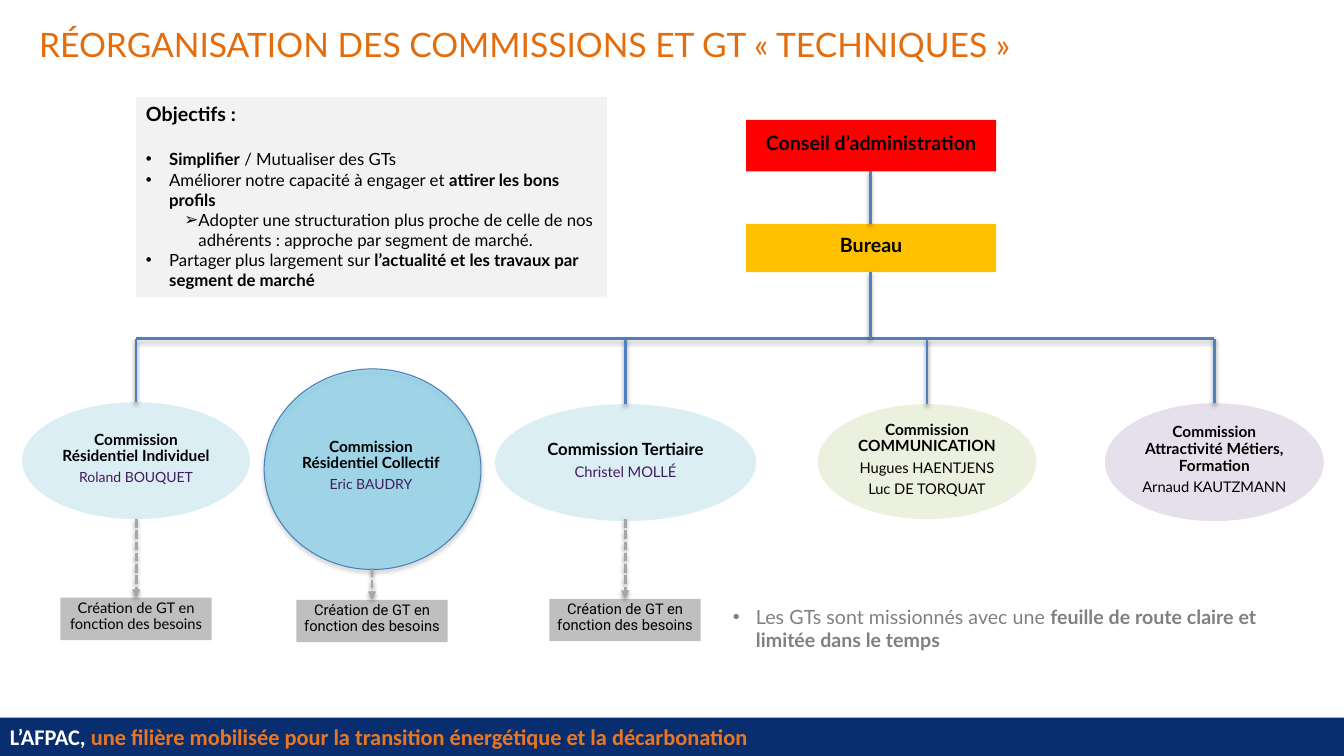
import pptx
import pptx.util
import pptx.dml.color
import pptx.enum.dml
import pptx.enum.shapes
import pptx.enum.text
import pptx.oxml
import pptx.oxml.ns

Inches, Pt = pptx.util.Inches, pptx.util.Pt
SHAPE = pptx.enum.shapes.MSO_SHAPE
ALIGN = pptx.enum.text.PP_ALIGN
ANCHOR = pptx.enum.text.MSO_ANCHOR
NS = pptx.oxml.ns.nsdecls("a")

COLORS = {
    "title": "E46C0A", "navy": "092E6F", "orange": "EA7621", "white": "FFFFFF",
    "black": "000000", "red": "FF0000", "amber": "FFC000", "ice": "DBEEF4",
    "cyan": "00B0F0", "sky": "9FD4E7", "green": "EBF1DE", "lilac": "E6E0EC",
    "purple": "421C5E", "panel": "F2F2F2", "box": "BFBFBF", "note": "808080",
    "link": "4F81BD", "outline": "4B7EBC", "dash": "A6A6A6",
}


def rgb(name):
    return pptx.dml.color.RGBColor.from_string(COLORS[name])


def add_shadow(sp, blur, dist, alpha):
    for old in sp._element.spPr.findall(pptx.oxml.ns.qn("a:effectLst")):
        sp._element.spPr.remove(old)
    sp._element.spPr.append(pptx.oxml.parse_xml(
        f'<a:effectLst {NS}><a:outerShdw blurRad="{Pt(blur)}" dist="{Pt(dist)}" dir="5400000" '
        f'rotWithShape="0"><a:srgbClr val="000000"><a:alpha val="{alpha * 1000}"/></a:srgbClr>'
        '</a:outerShdw></a:effectLst>'))


def add_block(s, kind, box, fill):
    sp = s.shapes.add_shape(kind, *map(Inches, box))
    sp.shadow.inherit = False
    sp.fill.solid()
    sp.fill.fore_color.rgb = rgb(fill)
    sp.line.fill.background()
    sp.text_frame.word_wrap = True
    return sp


def add_text(s, box, anchor=ANCHOR.TOP):
    tf = s.shapes.add_textbox(*map(Inches, box)).text_frame
    tf.word_wrap = True
    tf.vertical_anchor = anchor
    return tf


def add_runs(p, runs, size, color, font="Lato"):
    """Each run is (text, bold)."""
    for text, bold in runs:
        r = p.add_run()
        r.text = text
        r.font.name, r.font.size, r.font.bold = font, Pt(size), bold
        r.font.color.rgb = rgb(color)


def add_bullet(p, char, left, hang):
    pPr = p._p.get_or_add_pPr()
    pPr.set("marL", str(Inches(left)))
    pPr.set("indent", str(-Inches(hang)))
    pPr.append(pptx.oxml.parse_xml(f'<a:buFont {NS} typeface="Arial"/>'))
    pPr.append(pptx.oxml.parse_xml(f'<a:buChar {NS} char="{char}"/>'))


def fill_label(sp, lines, font="Lato"):
    """Each line is (text, size, bold, color)."""
    tf = sp.text_frame
    tf.margin_left = tf.margin_right = tf.margin_top = 0
    tf.margin_bottom = Inches(0.04)
    tf.vertical_anchor = ANCHOR.MIDDLE
    for i, (text, size, bold, color) in enumerate(lines):
        p = tf.add_paragraph() if i else tf.paragraphs[0]
        p.alignment = ALIGN.CENTER
        p.line_spacing = 0.9
        p.space_after = Pt(0.35 * size)
        add_runs(p, [(text, bold)], size, color, font)


def add_link(s, x1, y1, x2, y2, arrow=False):
    ln = s.shapes.add_connector(pptx.enum.shapes.MSO_CONNECTOR.STRAIGHT,
                                *map(Inches, (x1, y1, x2, y2)))
    ln.line.width = Pt(2)
    ln.line.color.rgb = rgb("dash" if arrow else "link")
    if arrow:
        ln.line.dash_style = pptx.enum.dml.MSO_LINE.SQUARE_DOT
        ln.line._get_or_add_ln().append(
            pptx.oxml.parse_xml(f'<a:tailEnd {NS} type="triangle"/>'))
    add_shadow(ln, 3.1, 1.6, 38)


def add_footer(s, box):
    bar = add_block(s, SHAPE.RECTANGLE, box, "navy")
    add_shadow(bar, 3.1, 1.8, 35)
    p = add_text(s, box, ANCHOR.MIDDLE).paragraphs[0]
    add_runs(p, [("L’AFPAC, ", True)], 16, "white", "Calibri")
    add_runs(p, [("une filière mobilisée pour la transition énergétique et la décarbonation", True)],
             16, "orange", "Calibri")


def add_title(s, box):
    p = add_text(s, box, ANCHOR.BOTTOM).paragraphs[0]
    p.line_spacing = 0.9
    add_runs(p, [("RÉORGANISATION DES COMMISSIONS ET GT «\u00a0TECHNIQUES\u00a0»", False)], 24, "title")


def add_objectives(s, box):
    tf = add_block(s, SHAPE.RECTANGLE, box, "panel").text_frame
    tf.vertical_anchor = ANCHOR.TOP
    p = tf.paragraphs[0]
    p.alignment = ALIGN.LEFT
    p.space_after = Pt(17)
    add_runs(p, [("Objectifs :", True)], 14, "black")
    goals = [
        (0, [("Simplifier", True), (" / Mutualiser des GTs", False)]),
        (0, [("Améliorer notre capacité à engager et ", False), ("attirer les bons profils", True)]),
        (1, [("Adopter une structuration plus proche de celle de nos adhérents : "
              "approche par segment de marché.", False)]),
        (0, [("Partager plus largement sur ", False),
             ("l’actualité et les travaux par segment de marché", True)]),
    ]
    for level, runs in goals:
        p = tf.add_paragraph()
        p.alignment = ALIGN.LEFT
        p.level = level
        add_bullet(p, *(("➢", 0.52, 0.14) if level else ("•", 0.23, 0.23)))
        add_runs(p, runs, 12, "black")


def add_governance(s, box, rail_y):
    """Board above bureau, joined down to the rail."""
    x, y, w, h = box
    mid = x + w / 2 - 0.01
    for top, height, text, fill in ((y, 0.51, "Conseil d’administration", "red"),
                                    (y + h - 0.48, 0.48, "Bureau", "amber")):
        sp = add_block(s, SHAPE.RECTANGLE, (x, top, w, height), fill)
        fill_label(sp, [(text, 14, True, "black")])
    add_link(s, mid, y + 0.51, mid, y + h - 0.48)
    add_link(s, mid, y + h, mid, rail_y)


def add_commission(s, box, fill, name, size, people, person_size, person_color):
    lines = [(name, size, True, "black")]
    lines += [(person, person_size, False, person_color) for person in people]
    fill_label(add_block(s, SHAPE.OVAL, box, fill), lines)


def add_highlight(s, box):
    """Circled commission with its label in the middle."""
    x, y, w, h = box
    sp = add_block(s, SHAPE.OVAL, box, "cyan")
    clr = sp._element.spPr.find(".//" + pptx.oxml.ns.qn("a:srgbClr"))
    clr.append(pptx.oxml.parse_xml(f'<a:alpha {NS} val="30000"/>'))
    sp.line.color.rgb = rgb("outline")
    sp.line.width = Pt(0.75)
    add_shadow(sp, 3.1, 1.8, 35)
    label = add_block(s, SHAPE.RECTANGLE, (x + 0.31, y + 0.68, 1.5, 0.6), "sky")
    fill_label(label, [("Commission Résidentiel Collectif", 11, True, "black"),
                       ("Eric BAUDRY", 10, False, "purple")])


def add_working_group(s, box, start_y, font):
    x, y, w, h = box
    sp = add_block(s, SHAPE.RECTANGLE, box, "box")
    fill_label(sp, [("Création de GT en fonction des besoins", 10.5, False, "black")], font)
    add_link(s, x + w / 2, start_y, x + w / 2, y, arrow=True)


def add_note(s, box):
    p = add_text(s, box).paragraphs[0]
    add_bullet(p, "•", 0.23, 0.23)
    add_runs(p, [("Les GTs sont missionnés avec une ", False),
                 ("feuille de route claire et limitée dans le temps", True)], 14, "note")


def main():
    prs = pptx.Presentation()
    prs.slide_width, prs.slide_height = Inches(13.33), Inches(7.5)
    s = prs.slides.add_slide(prs.slide_layouts[6])
    rail_y = 3.36

    add_footer(s, (0, 7.12, 13.33, 0.38))
    add_title(s, (0.29, 0.23, 12.76, 0.46))
    add_objectives(s, (1.35, 0.96, 4.67, 1.99))
    add_highlight(s, (2.62, 3.66, 2.15, 1.99))

    # Commissions hanging from the rail
    commissions = [
        ((0.22, 3.99, 2.26, 1.16), "ice", "Commission Résidentiel Individuel", 11,
         ["Roland BOUQUET"], 10, "purple"),
        ((4.91, 4.01, 2.59, 1.16), "ice", "Commission Tertiaire", 12,
         ["Christel MOLLÉ"], 10.5, "purple"),
        ((8.11, 4.01, 2.17, 1.14), "green", "Commission COMMUNICATION", 11,
         ["Hugues HAENTJENS", "Luc DE TORQUAT"], 10.5, "black"),
        ((10.96, 4, 2.17, 1.17), "lilac", "Commission Attractivité Métiers, Formation", 11,
         ["Arnaud KAUTZMANN"], 10.5, "black"),
    ]
    for commission in commissions:
        add_commission(s, *commission)
    drops = [(x + w / 2, y) for (x, y, w, h), *rest in commissions]
    add_link(s, drops[0][0], rail_y, drops[-1][0], rail_y)
    for x, y in drops:
        add_link(s, x, rail_y, x, y)
    add_governance(s, (7.4, 1.19, 2.48, 1.51), rail_y)

    # Working groups
    for x, y, start_y, font in ((0.6, 5.93, 5.15, "Lato"), (2.94, 5.95, 5.64, "Roboto"),
                                (5.45, 5.94, 5.15, "Roboto")):
        add_working_group(s, (x, y, 1.5, 0.42), start_y, font)
    add_note(s, (7.17, 5.95, 5.5, 0.57))
    prs.save("out.pptx")


if __name__ == "__main__":
    main()
